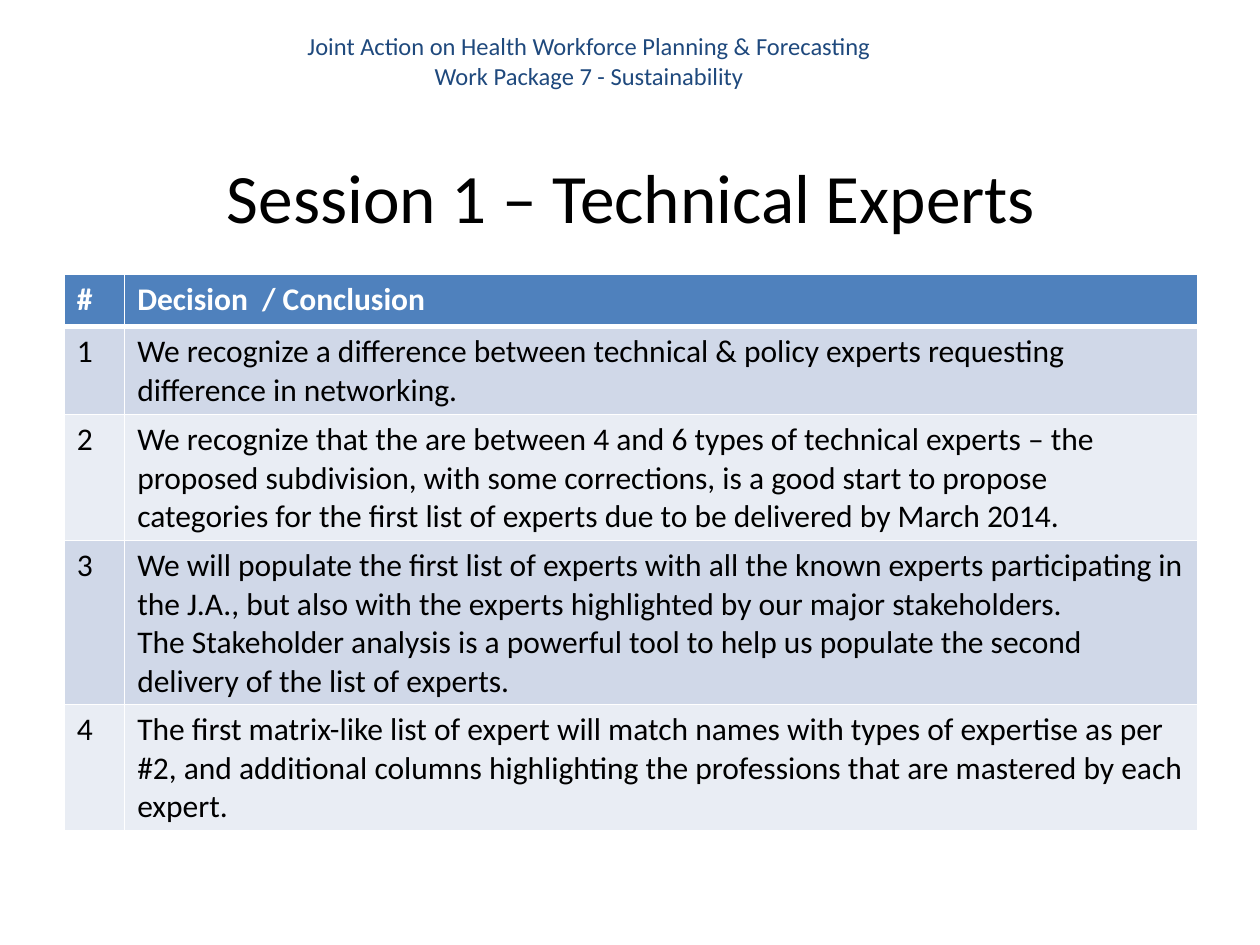
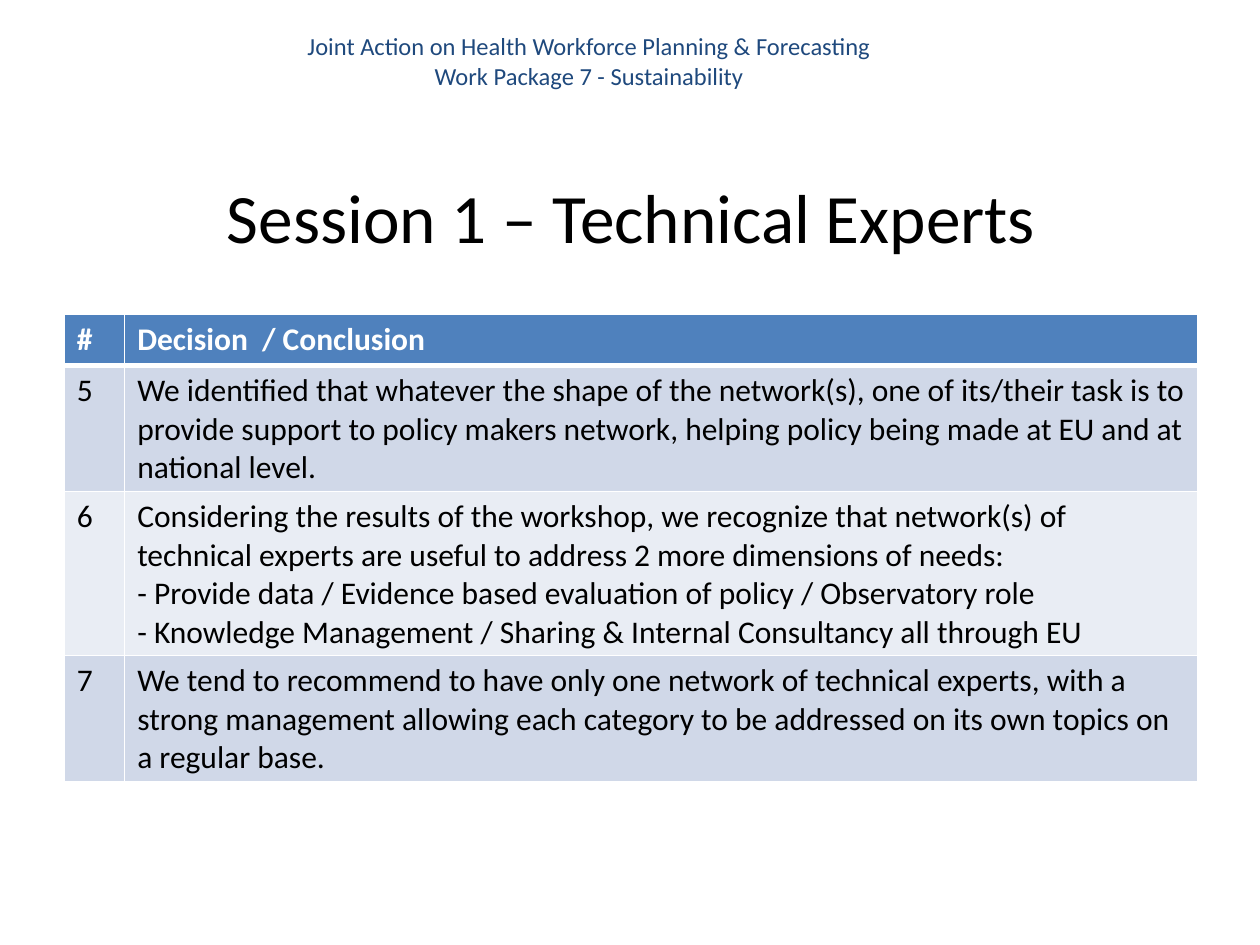
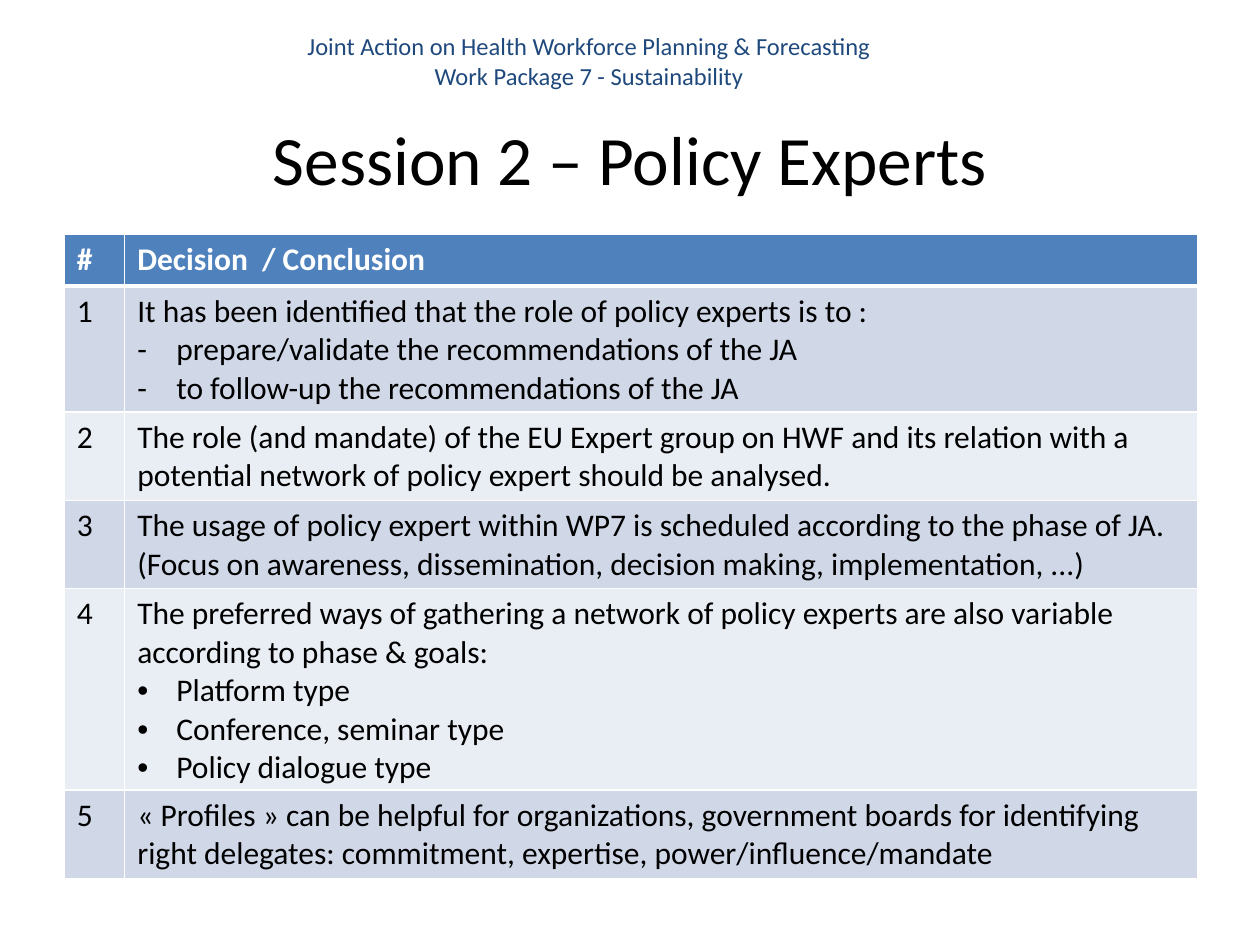
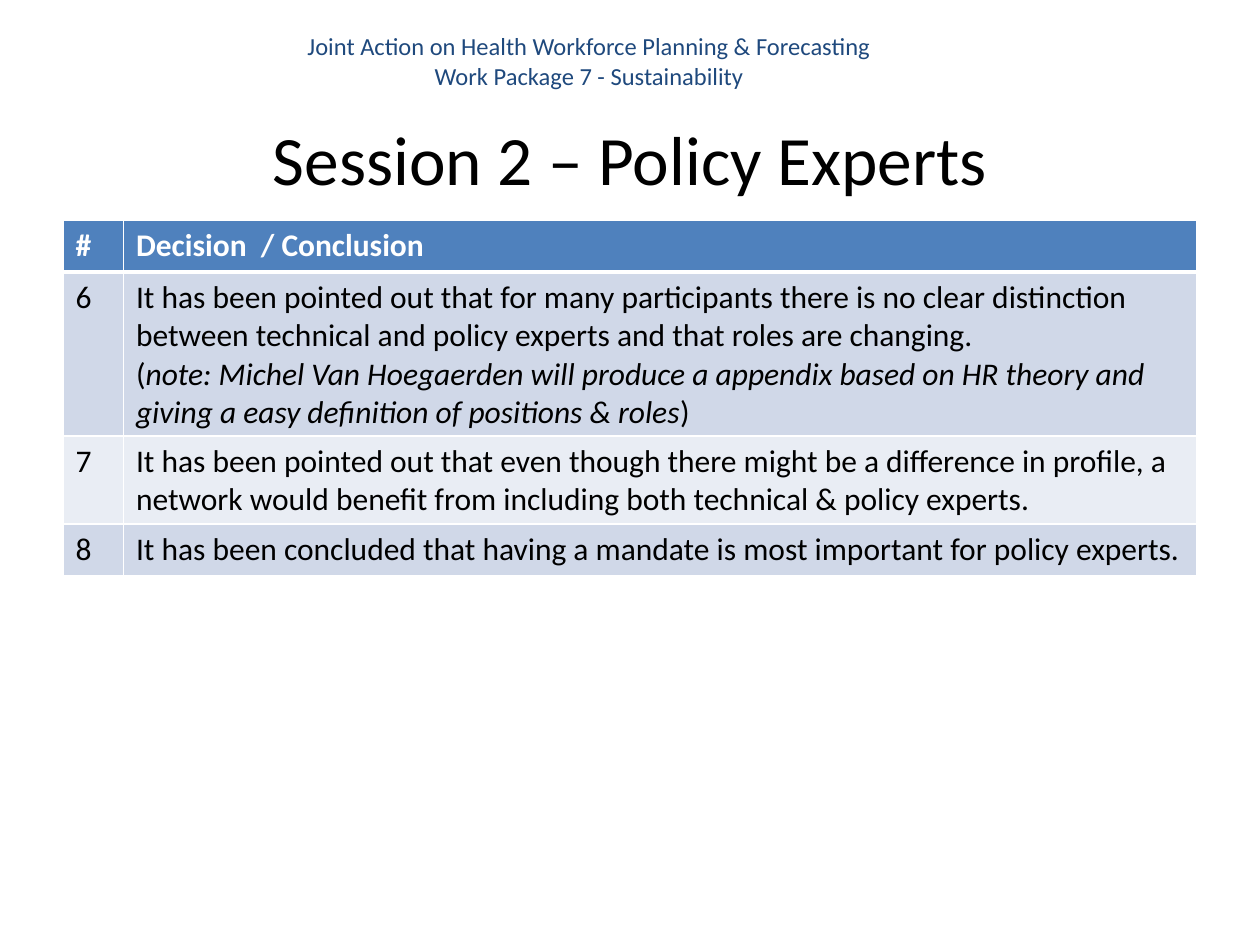
"""Build four slides of workshop decisions, each a title above a numbered table."""
from lxml import etree
from pptx import Presentation
from pptx.dml.color import RGBColor
from pptx.enum.text import MSO_ANCHOR, MSO_AUTO_SIZE, PP_ALIGN
from pptx.oxml.ns import qn
from pptx.util import Inches, Pt

CENTER = PP_ALIGN.CENTER
MIDDLE = MSO_ANCHOR.MIDDLE
NO_AUTOFIT = MSO_AUTO_SIZE.NONE
TITLE_ONLY = 5
FONT = "Calibri"
BULLET_FONTS = {"-": FONT, "•": "Arial"}
NAVY, BLACK, WHITE = "1F497D", "000000", "FFFFFF"
HEADER_FILL = "4F81BD"
BAND_FILLS = ("D0D8E8", "E9EDF4")
COL_WIDTHS = (0.48, 8.52)
ROW_HEIGHT = 0.41
INDENT = 0.31

BANNER = ("Joint Action on Health Workforce Planning & Forecasting",
          "Work Package 7 - Sustainability")
BANNER_BOX = (1.88, 0.2, 5.59, 0.57)
BANNER_FORMAT = {"size": Pt(14)}
TITLE_FORMAT = {"size": Pt(39.6)}
HEADER_FORMAT = {"size": Pt(18), "bold": True}
BODY_FORMAT = {"size": Pt(18), "bold": False}

SLIDES = [
    {"title": "Session 1 – Technical Experts",
     "title_box": (0.51, 0.6, 9, 1.25),
     "table_box": (0.51, 2.18, 9, 4.41),
     "first_number": 1,
     "decisions": [
         ["We recognize a difference between technical & policy experts requesting "
          "difference in networking."],
         ["We recognize that the are between 4 and 6 types of technical experts – the "
          "proposed subdivision, with some corrections, is a good start to propose "
          "categories for the first list of experts due to be delivered by March 2014."],
         ["We will populate the first list of experts with all the known experts "
          "participating in the J.A., but also with the experts highlighted by our "
          "major stakeholders.",
          "The Stakeholder analysis is a powerful tool to help us populate the second "
          "delivery of the list of experts."],
         ["The first matrix-like list of expert will match names with types of "
          "expertise as per #2, and additional columns highlighting the professions "
          "that are mastered by each expert."]]},
    {"title": "Session 1 – Technical Experts",
     "title_box": (0.51, 0.92, 9, 0.94),
     "table_box": (0.51, 2.49, 9, 3.7),
     "first_number": 5,
     "decisions": [
         ["We identified that whatever the shape of the network(s), one of its/their "
          "task is to provide support to policy makers network, helping policy being "
          "made at EU and at national level."],
         ["Considering the results of the workshop, we recognize that network(s) of "
          "technical experts are useful to address 2 more dimensions of needs:",
          "- Provide data / Evidence based evaluation of policy / Observatory role",
          "- Knowledge Management / Sharing & Internal Consultancy all through EU"],
         ["We tend to recommend to have only one network of technical experts, with a "
          "strong management allowing each category to be addressed on its own topics "
          "on a regular base."]]},
    {"title": "Session 2 – Policy Experts",
     "title_box": (0.5, 0.3, 9, 1.25),
     "table_box": (0.51, 1.86, 9, 5.11),
     "first_number": 1,
     "decisions": [
         ["It has been identified that the role of policy experts is to :",
          {"bullet": "-", "text": "prepare/validate the recommendations of the JA"},
          {"bullet": "-", "text": "to follow-up the recommendations of the JA"}],
         ["The role (and mandate) of the EU Expert group on HWF and its relation with a "
          "potential network of policy expert should be analysed."],
         ["The usage of policy expert within WP7 is scheduled according to the phase "
          "of JA.",
          "(Focus on awareness, dissemination, decision making, implementation, ...)"],
         ["The preferred ways of gathering a network of policy experts are also "
          "variable according to phase & goals:",
          {"bullet": "•", "text": "Platform type"},
          {"bullet": "•", "text": "Conference, seminar type"},
          {"bullet": "•", "text": "Policy dialogue type"}],
         ["« Profiles » can be helpful for organizations, government boards for "
          "identifying right delegates: commitment, expertise, "
          "power/influence/mandate"]]},
    {"title": "Session 2 – Policy Experts",
     "title_box": (0.5, 0.3, 9, 1.25),
     "table_box": (0.5, 1.75, 9, 2.81),
     "first_number": 6,
     "decisions": [
         ["It has been pointed out that for many participants there is no clear "
          "distinction between technical and policy experts and that roles are "
          "changing.",
          [("(", False),
           ("note: Michel Van Hoegaerden will produce a appendix based on HR theory "
            "and giving a easy definition of positions & roles", True),
           (")", False)]],
         ["It has been pointed out that even though there might be a difference in "
          "profile, a network would benefit from including both technical & policy "
          "experts."],
         ["It has been concluded that having a mandate is most important for policy "
          "experts."]]},
]


def rgb(color):
    """Turn a hex string into a colour."""
    return RGBColor.from_string(color)


def inches(box):
    """Turn a box of numbers into lengths."""
    return [Inches(n) for n in box]


def set_bullet(p, char):
    """Give a paragraph a hanging bullet."""
    pPr = p._p.get_or_add_pPr()
    pPr.set("marL", str(Inches(INDENT)))
    pPr.set("indent", str(-Inches(INDENT)))
    etree.SubElement(pPr, qn("a:buFont"), typeface=BULLET_FONTS[char])
    etree.SubElement(pPr, qn("a:buChar"), char=char)


def add_run(p, text, color, values):
    """Add a run with the given format values."""
    r = p.add_run()
    r.text = text
    r.font.name = FONT
    r.font.color.rgb = rgb(color)
    for name, value in values.items():
        setattr(r.font, name, value)


def write(tf, paragraphs, color, values, align=None):
    """Fill a text frame with plain, bulleted or partly italic paragraphs."""
    for i, content in enumerate(paragraphs):
        p = tf.paragraphs[0] if i == 0 else tf.add_paragraph()
        p.alignment = align
        if isinstance(content, dict):
            set_bullet(p, content["bullet"])
            content = content["text"]
        if isinstance(content, str):
            content = [(content, False)]
        for text, italic in content:
            add_run(p, text, color, {**values, "italic": italic})


def add_banner(slide):
    """Write the project name at the top of a slide."""
    sp = slide.shapes.add_textbox(*inches(BANNER_BOX))
    sp.text_frame.word_wrap = True
    write(sp.text_frame, BANNER, NAVY, BANNER_FORMAT, CENTER)


def set_title(slide, text, box):
    """Place the title in the lower part of its placeholder."""
    sp = slide.shapes.title
    sp.left, sp.top, sp.width, sp.height = inches(box)
    tf = sp.text_frame
    frame = {"auto_size": NO_AUTOFIT, "word_wrap": True,
             "vertical_anchor": MIDDLE, "margin_top": Inches(0.7)}
    for name, value in frame.items():
        setattr(tf, name, value)
    write(tf, [text], BLACK, TITLE_FORMAT, CENTER)


def set_borders(cell, top, bottom):
    """Draw white borders around a cell."""
    tcPr = cell._tc.get_or_add_tcPr()
    for side, width in {"L": 1, "R": 1, "T": top, "B": bottom}.items():
        ln = etree.SubElement(tcPr, qn(f"a:ln{side}"), w=str(Pt(width)))
        fill = etree.SubElement(ln, qn("a:solidFill"))
        etree.SubElement(fill, qn("a:srgbClr"), val=WHITE)


def add_decisions(slide, decisions, first_number, box):
    """Add the table of numbered decisions."""
    rows = [(["#"], ["Decision  / Conclusion"])]
    rows += [([str(n)], text) for n, text in enumerate(decisions, first_number)]
    sp = slide.shapes.add_table(len(rows), len(COL_WIDTHS), *inches(box))
    table = sp.table
    for col, width in zip(table.columns, COL_WIDTHS):
        col.width = Inches(width)
    for i, row in enumerate(rows):
        table.rows[i].height = Inches(ROW_HEIGHT)
        header = i == 0
        color, values = (WHITE, HEADER_FORMAT) if header else (BLACK, BODY_FORMAT)
        for j, paragraphs in enumerate(row):
            cell = table.cell(i, j)
            set_borders(cell, 3 if i == 1 else 1, 3 if header else 1)
            cell.fill.solid()
            cell.fill.fore_color.rgb = rgb(HEADER_FILL if header
                                           else BAND_FILLS[(i - 1) % 2])
            write(cell.text_frame, paragraphs, color, values)
    sp.height = Inches(box[3])


def main():
    """Build and save the presentation."""
    prs = Presentation()
    prs.slide_width, prs.slide_height = Inches(10), Inches(7.5)
    for content in SLIDES:
        slide = prs.slides.add_slide(prs.slide_layouts[TITLE_ONLY])
        add_banner(slide)
        set_title(slide, content["title"], content["title_box"])
        add_decisions(slide, content["decisions"], content["first_number"],
                      content["table_box"])
    prs.save("out.pptx")


if __name__ == "__main__":
    main()
